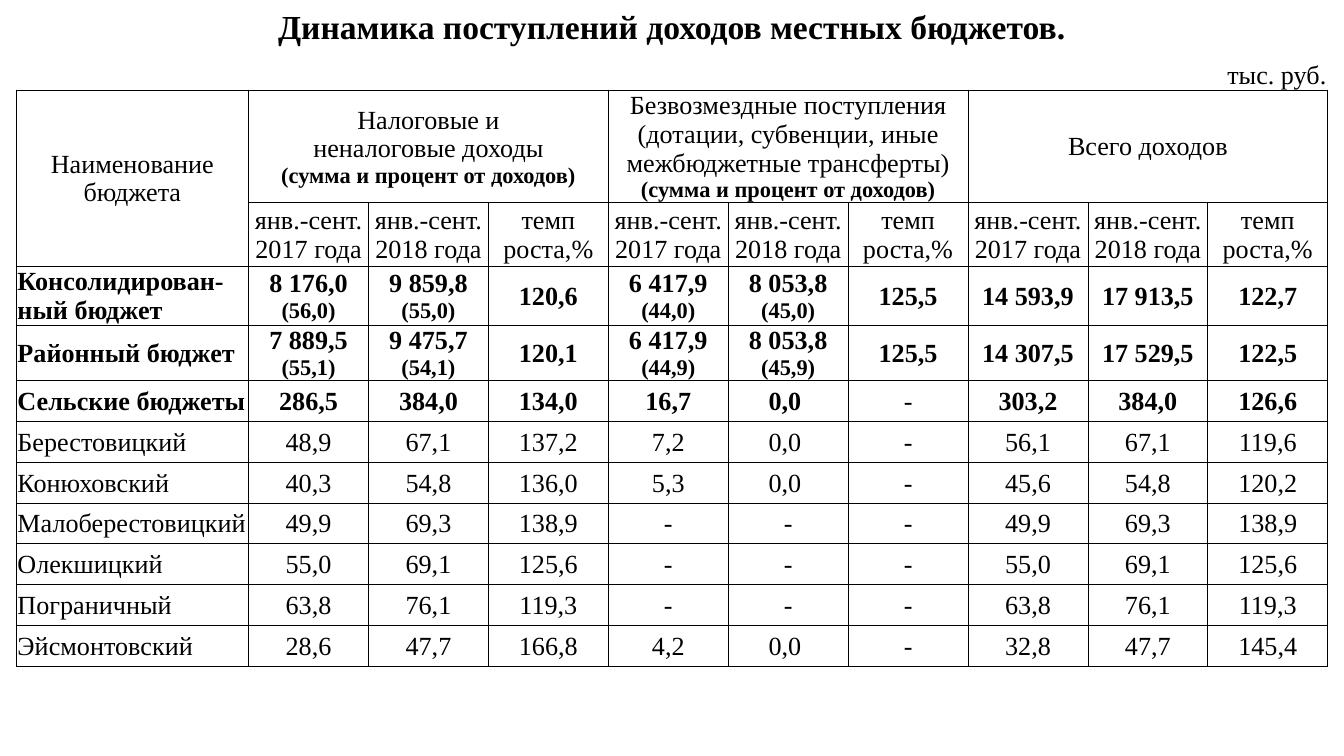
from lxml.etree import SubElement
from pptx import Presentation
from pptx.dml.color import RGBColor
from pptx.enum.text import MSO_ANCHOR as Anchor, PP_ALIGN as Align
from pptx.oxml.ns import qn
from pptx.util import Inches, Pt

BLACK = RGBColor(0x00, 0x00, 0x00)
FONT = "Times New Roman"
SIDES = ("L", "R", "T", "B")

TITLE = "Динамика поступлений доходов местных бюджетов."
UNIT = "тыс. руб."
SHARE_NOTE = "(сумма и процент от доходов)"
GROUPS = [
    f"Налоговые и\nненалоговые доходы\n{SHARE_NOTE}",
    "Безвозмездные поступления (дотации, субвенции, иные "
    f"межбюджетные трансферты)\n{SHARE_NOTE}",
    "Всего доходов",
]
PERIODS = ["янв.-сент. 2017 года", "янв.-сент. 2018 года", "темп\nроста,%"]
BUDGETS = [
    ["Консолидирован-ный бюджет", "8 176,0\n(56,0)", "9 859,8\n(55,0)", "120,6",
     "6 417,9\n(44,0)", "8 053,8\n(45,0)", "125,5", "14 593,9", "17 913,5", "122,7"],
    ["Районный бюджет", "7 889,5\n(55,1)", "9 475,7\n(54,1)", "120,1",
     "6 417,9\n(44,9)", "8 053,8\n(45,9)", "125,5", "14 307,5", "17 529,5", "122,5"],
    ["Сельские бюджеты", "286,5", "384,0", "134,0", "16,7", "0,0 ", "-",
     "303,2", "384,0", "126,6"],
    ["Берестовицкий", "48,9", "67,1", "137,2", "7,2", "0,0 ", "-",
     "56,1", "67,1", "119,6"],
    ["Конюховский", "40,3", "54,8", "136,0", "5,3", "0,0 ", "-",
     "45,6", "54,8", "120,2"],
    ["Малоберестовицкий", "49,9", "69,3", "138,9", "-", "-", "-",
     "49,9", "69,3", "138,9"],
    ["Олекшицкий", "55,0", "69,1", "125,6", "-", "-", "-",
     "55,0", "69,1", "125,6"],
    ["Пограничный", "63,8", "76,1", "119,3", "-", "-", "-",
     "63,8", "76,1", "119,3"],
    ["Эйсмонтовский", "28,6", "47,7", "166,8", "4,2", "0,0 ", "-",
     "32,8", "47,7", "145,4"],
]
HEAD_ROWS = 4
TOTAL_ROWS = 3
COLUMNS = 10
COLUMN_WIDTHS = [1.73] + [8.03 / 9] * 9
ROW_HEIGHTS = [0.32, 0.32, 0.47, 0.47] + [2.74 / 9] * 9


def write_text(cell, text, size=14, bold=False, align=Align.CENTER, anchor=Anchor.MIDDLE):
    cell.vertical_anchor = anchor
    frame = cell.text_frame
    for index, line in enumerate(text.split("\n")):
        para = frame.add_paragraph() if index else frame.paragraphs[0]
        para.alignment = align
        span = para.add_run()
        span.text = line
        in_brackets = line.startswith("(")
        span.font.name = FONT
        span.font.size = Pt(12 if in_brackets else size)
        span.font.bold = bold or in_brackets
        span.font.color.rgb = BLACK


class BudgetSlide:
    def __init__(self, deck):
        self.page = deck.slides.add_slide(deck.slide_layouts[6])
        self.line_width = Pt(0.5)

    def add_grid(self):
        box = self.page.shapes.add_table(
            len(ROW_HEIGHTS), COLUMNS,
            Inches(0.12), Inches(0.03), Inches(9.76), Inches(5.08))
        table = box.table
        table.first_row = table.horz_banding = False
        for column, width in zip(table.columns, COLUMN_WIDTHS):
            column.width = Inches(width)
        for row, height in zip(table.rows, ROW_HEIGHTS):
            row.height = Inches(height)
        box.height = Inches(5.08)
        for number, row in enumerate(table.rows):
            visible = ("", "B")[number] if number < 2 else "LRTB"
            for cell in row.cells:
                self.format_cell(cell, visible)
        return table

    def format_cell(self, cell, visible):
        cell.margin_left = cell.margin_right = cell.margin_top = Inches(0.01)
        cell.margin_bottom = 0
        cell.fill.background()
        properties = cell._tc.get_or_add_tcPr()
        for index, side in enumerate(SIDES):
            line = SubElement(properties, qn(f"a:ln{side}"), w=str(self.line_width))
            if side in visible:
                fill = SubElement(line, qn("a:solidFill"))
                SubElement(fill, qn("a:srgbClr"), val=str(BLACK))
            else:
                SubElement(line, qn("a:noFill"))
            properties.insert(index, line)

    def add_heading(self, table):
        table.cell(0, 0).merge(table.cell(0, COLUMNS - 1))
        write_text(table.cell(0, 0), TITLE, size=18, bold=True, anchor=Anchor.BOTTOM)
        for column in (1, 3, 5):
            table.cell(1, column).merge(table.cell(1, column + 1))
        write_text(table.cell(1, COLUMNS - 1), UNIT, align=Align.RIGHT, anchor=Anchor.BOTTOM)
        table.cell(2, 0).merge(table.cell(3, 0))
        write_text(table.cell(2, 0), "Наименование бюджета")
        for index, group in enumerate(GROUPS):
            first = 1 + index * len(PERIODS)
            table.cell(2, first).merge(table.cell(2, first + len(PERIODS) - 1))
            write_text(table.cell(2, first), group)
            for offset, period in enumerate(PERIODS):
                write_text(table.cell(3, first + offset), period)

    def add_budgets(self, table):
        for index, values in enumerate(BUDGETS):
            for column, value in enumerate(values):
                write_text(
                    table.cell(HEAD_ROWS + index, column), value,
                    bold=index < TOTAL_ROWS and value != "-",
                    align=Align.CENTER if column else Align.LEFT)


def main():
    deck = Presentation()
    deck.slide_width = Inches(10)
    deck.slide_height = deck.slide_width * 9 // 16
    slide = BudgetSlide(deck)
    table = slide.add_grid()
    slide.add_heading(table)
    slide.add_budgets(table)
    deck.save("out.pptx")


if __name__ == "__main__":
    main()
